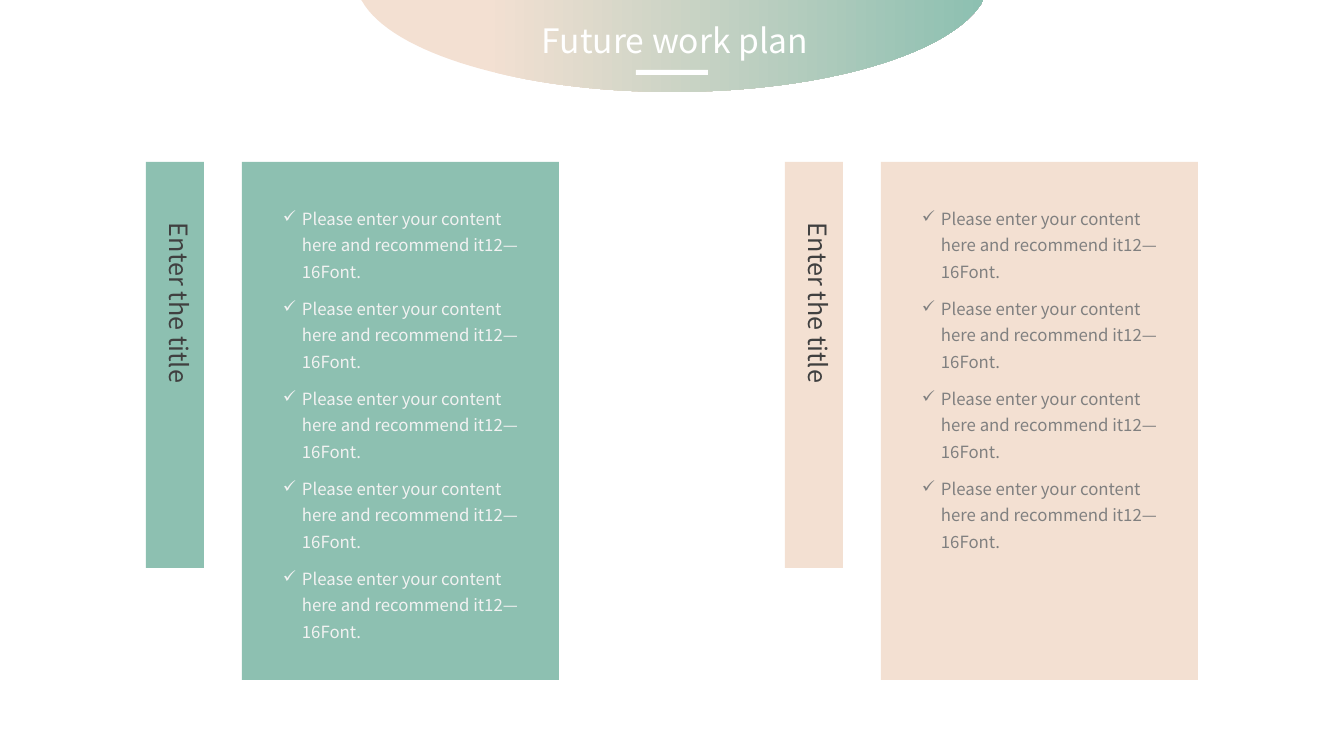
"""Build the "Future work plan" slide with two bulleted panels."""
from dataclasses import dataclass

from lxml import etree
from pptx import Presentation
from pptx.dml.color import RGBColor
from pptx.enum.shapes import MSO_SHAPE
from pptx.enum.text import MSO_AUTO_SIZE, PP_ALIGN
from pptx.oxml.ns import qn
from pptx.shapes.autoshape import Shape
from pptx.slide import Slide
from pptx.util import Emu, Pt

RECTANGLE = MSO_SHAPE.RECTANGLE
GROW = MSO_AUTO_SIZE.SHAPE_TO_FIT_TEXT
CENTER = PP_ALIGN.CENTER
LEFT = PP_ALIGN.LEFT

SLIDE_WIDTH, SLIDE_HEIGHT = 1344, 756
SCALE = 12192000 / SLIDE_WIDTH

GREEN = RGBColor(0x8D, 0xC0, 0xB1)
PEACH = RGBColor(0xF3, 0xE0, 0xD2)
WHITE = RGBColor(0xFF, 0xFF, 0xFF)
PALE = RGBColor(0xF2, 0xF2, 0xF2)
GRAY = RGBColor(0x80, 0x80, 0x80)
DARK = RGBColor(0x40, 0x40, 0x40)

FONT = "Noto Sans CJK SC"
ITEM_TEXT = "Please enter your content here and recommend it12—16Font."
ITEM_TOP, ITEM_PITCH = 198, 90
BULLET_INDENT = 19
CURVE_STEPS = 32

Point = tuple[float, float]


@dataclass(frozen=True)
class Area:
    """A rectangle in px."""

    left: int
    top: int
    width: int
    height: int

    def emu(self) -> tuple[Emu, Emu, Emu, Emu]:
        """Return left, top, width and height in EMU."""
        return px(self.left), px(self.top), px(self.width), px(self.height)


@dataclass(frozen=True)
class TextStyle:
    """The look of one text box."""

    size: int
    color: RGBColor
    align: PP_ALIGN = CENTER
    bulleted: bool = False
    vertical: bool = False


@dataclass(frozen=True)
class Panel:
    """A title bar with a list panel beside it."""

    left: int
    fill: RGBColor
    text_color: RGBColor
    item_count: int


PANELS = (Panel(146, GREEN, PALE, 5), Panel(785, PEACH, GRAY, 4))
BANNER_CURVES: tuple[tuple[Point, Point, Point, Point], ...] = (
    ((983, 1), (953, 53), (826, 92), (672, 92)),
    ((672, 92), (519, 92), (391, 53), (362, 1)),
)


def px(length: float) -> Emu:
    """Turn px into EMU."""
    return Emu(round(length * SCALE))


def add_block(page: Slide, area: Area, color: RGBColor) -> None:
    """Add a plain filled rectangle."""
    block = page.shapes.add_shape(RECTANGLE, *area.emu())
    block.shadow.inherit = False
    block.fill.solid()
    block.fill.fore_color.rgb = color
    block.line.fill.background()


def add_text(page: Slide, area: Area, text: str, style: TextStyle) -> Shape:
    """Add a one-paragraph text box."""
    box = page.shapes.add_textbox(*area.emu())
    frame = box.text_frame
    frame.word_wrap = True
    frame.auto_size = GROW
    if style.vertical:
        box.element.txBody.find(qn("a:bodyPr")).set("vert", "eaVert")
    para = frame.paragraphs[0]
    para.alignment = style.align
    span = para.add_run()
    span.text = text
    for name, value in {"name": FONT, "size": Pt(style.size)}.items():
        setattr(span.font, name, value)
    span.font.color.rgb = style.color
    if style.bulleted:
        para.line_spacing = 1.3
        properties = box.element.txBody.find(qn("a:p")).find(qn("a:pPr"))
        indent = px(BULLET_INDENT)
        for name, value in {"marL": indent, "indent": -indent}.items():
            properties.set(name, str(int(value)))
        etree.SubElement(properties, qn("a:buChar")).set("char", "✓")
    return box


def curve_point(curve: tuple[Point, Point, Point, Point], t: float) -> Point:
    """Return the point of a cubic curve at t."""
    weights = ((1 - t) ** 3, 3 * t * (1 - t) ** 2, 3 * t**2 * (1 - t), t**3)
    x, y = (
        sum(weight * point[axis] for weight, point in zip(weights, curve))
        for axis in (0, 1)
    )
    return x, y


def add_banner(page: Slide) -> None:
    """Add the curved gradient banner at the top."""
    points: list[Point] = [(983, 0)]
    for curve in BANNER_CURVES:
        points += [curve_point(curve, step / CURVE_STEPS) for step in range(CURVE_STEPS + 1)]
    builder = page.shapes.build_freeform(px(361), px(0))
    builder.add_line_segments([(px(x), px(y)) for x, y in points], close=True)
    banner = builder.convert_to_shape()
    banner.shadow.inherit = False
    banner.line.fill.background()
    banner.fill.gradient()
    banner.fill.gradient_angle = 0
    stops = ((0.2, PEACH), (1.0, GREEN))
    for stop, (position, color) in zip(banner.fill.gradient_stops, stops):
        stop.position = position
        stop.color.rgb = color


def add_panel(page: Slide, panel: Panel) -> None:
    """Add a title bar, its list panel and the items."""
    add_block(page, Area(panel.left, 162, 58, 406), panel.fill)
    add_block(page, Area(panel.left + 96, 162, 317, 518), panel.fill)
    title_style = TextStyle(18, DARK, vertical=True)
    add_text(page, Area(panel.left + 4, 213, 50, 283), "Enter the title", title_style)
    item_style = TextStyle(12, panel.text_color, LEFT, bulleted=True)
    for index in range(panel.item_count):
        top = ITEM_TOP + index * ITEM_PITCH
        add_text(page, Area(panel.left + 127, top, 256, 60), ITEM_TEXT, item_style)


def main() -> None:
    """Build and save the deck."""
    deck = Presentation()
    deck.slide_width = px(SLIDE_WIDTH)
    deck.slide_height = px(SLIDE_HEIGHT)
    page = deck.slides.add_slide(deck.slide_layouts[6])
    for panel in PANELS:
        add_panel(page, panel)
    add_banner(page)
    add_text(page, Area(528, 15, 294, 50), "Future work plan", TextStyle(24, WHITE))
    add_block(page, Area(636, 70, 72, 5), WHITE)
    deck.save("out.pptx")


if __name__ == "__main__":
    main()
